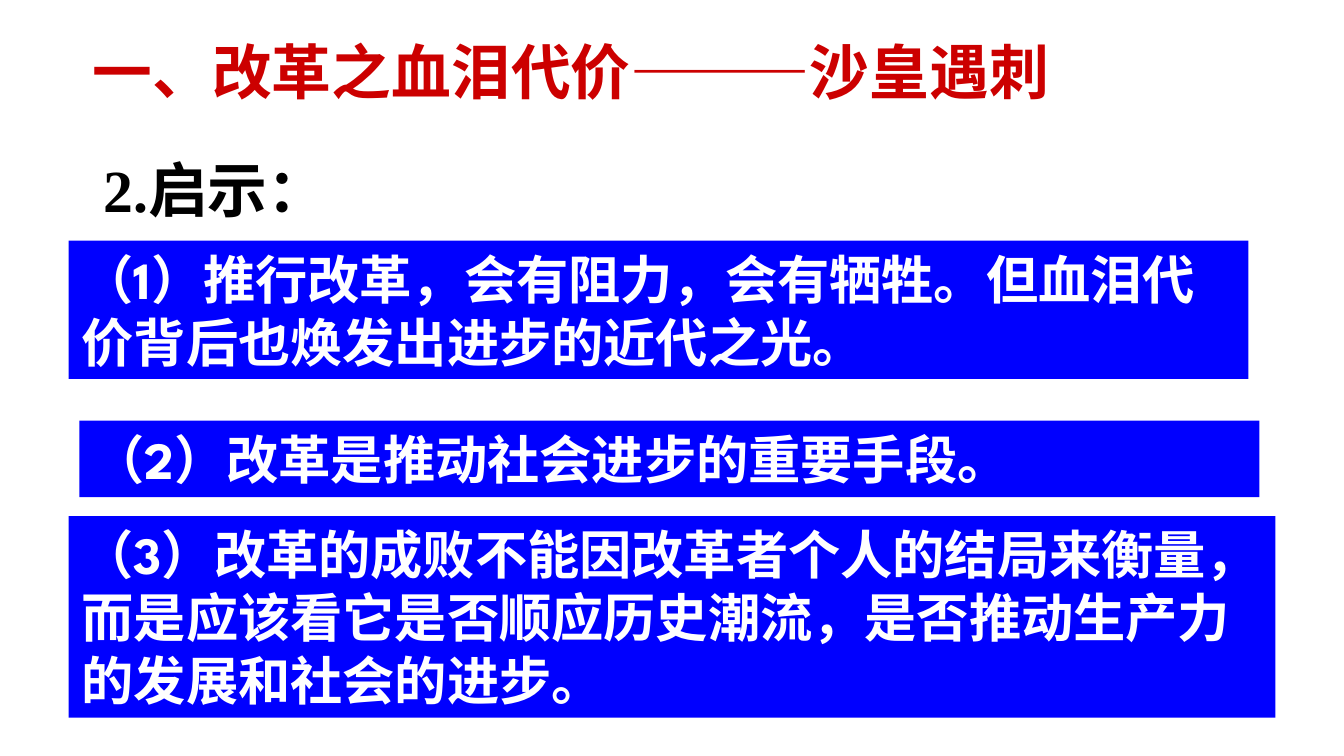
from dataclasses import dataclass

from lxml.etree import SubElement
from pptx import Presentation
from pptx.dml.color import RGBColor
from pptx.enum.shapes import MSO_SHAPE
from pptx.enum.text import MSO_ANCHOR, MSO_AUTO_SIZE, PP_ALIGN
from pptx.oxml.ns import qn
from pptx.util import Pt

SCALE = 4572


@dataclass(frozen=True)
class Theme:
    """Colours, fonts and type sizes of the slide."""
    red: str = "CC0000"
    black: str = "000000"
    white: str = "FFFFFF"
    blue: str = "0000FF"
    han: str = "Noto Sans CJK SC"
    serif: str = "Times New Roman"
    sans: str = "League Spartan"
    head: int = 32
    body: int = 28
    lead: float = 1.2


def px(*nums):
    """Turn px lengths into EMU."""
    return [n * SCALE for n in nums]


def write(shape, text, *, theme, font, size, color, anchor=MSO_ANCHOR.TOP, wrap=True):
    """Put one bold, left-aligned paragraph into a shape."""
    frame = shape.text_frame
    frame.auto_size = MSO_AUTO_SIZE.NONE
    frame.word_wrap = wrap
    frame.vertical_anchor = anchor
    para = frame.paragraphs[0]
    para.alignment = PP_ALIGN.LEFT
    para.space_before = Pt(0)
    para.line_spacing = Pt(round(size * theme.lead, 1))
    para._p.get_or_add_pPr().set("hangingPunct", "0")
    run = para.add_run()
    run.text = text
    run.font.name = font
    run.font.size = Pt(size)
    run.font.bold = True
    run.font.color.rgb = RGBColor.from_string(color)
    SubElement(run.font._element, qn("a:ea"), typeface=theme.han)


class Deck:
    """Holds the theme and the current slide."""

    def __init__(self, theme, wide, high):
        """Start a deck with one title-only slide."""
        self.theme = theme
        self.file = Presentation()
        self.file.slide_width, self.file.slide_height = px(wide, high)
        self.slide = self.file.slides.add_slide(self.file.slide_layouts[5])

    def title(self, text, *box):
        """Place and fill the title."""
        shape = self.slide.shapes.title
        shape.left, shape.top, shape.width, shape.height = px(*box)
        write(shape, text, theme=self.theme, font=self.theme.han,
              size=self.theme.head, color=self.theme.red, wrap=False)

    def label(self, text, *box):
        """Add a subheading."""
        shape = self.slide.shapes.add_textbox(*px(*box))
        write(shape, text, theme=self.theme, font=self.theme.serif,
              size=self.theme.head, color=self.theme.black, anchor=MSO_ANCHOR.MIDDLE)

    def panel(self, text, *box):
        """Add a filled panel of body text."""
        shape = self.slide.shapes.add_shape(MSO_SHAPE.RECTANGLE, *px(*box))
        shape.shadow.inherit = False
        shape.fill.solid()
        shape.fill.fore_color.rgb = RGBColor.from_string(self.theme.blue)
        shape.line.fill.background()
        write(shape, text, theme=self.theme, font=self.theme.sans,
              size=self.theme.body, color=self.theme.white)


def main():
    """Build the slide and save it."""
    deck = Deck(Theme(), 2000, 1125)
    deck.title("一、改革之血泪代价———沙皇遇刺", 118, 42, 1468, 126)
    deck.label("2.启示：", 134, 216, 1308, 130)
    points = [
        ("（1）推行改革，会有阻力，会有牺牲。但血泪代价背后也焕发出进步的近代之光。",
         102, 358, 1756, 206),
        ("（2）改革是推动社会进步的重要手段。", 118, 626, 1756, 114),
        ("（3）改革的成败不能因改革者个人的结局来衡量，而是应该看它是否顺应历史潮流，"
         "是否推动生产力的发展和社会的进步。", 102, 768, 1796, 300),
    ]
    for text, *box in points:
        deck.panel(text, *box)
    deck.file.save("out.pptx")


if __name__ == "__main__":
    main()
